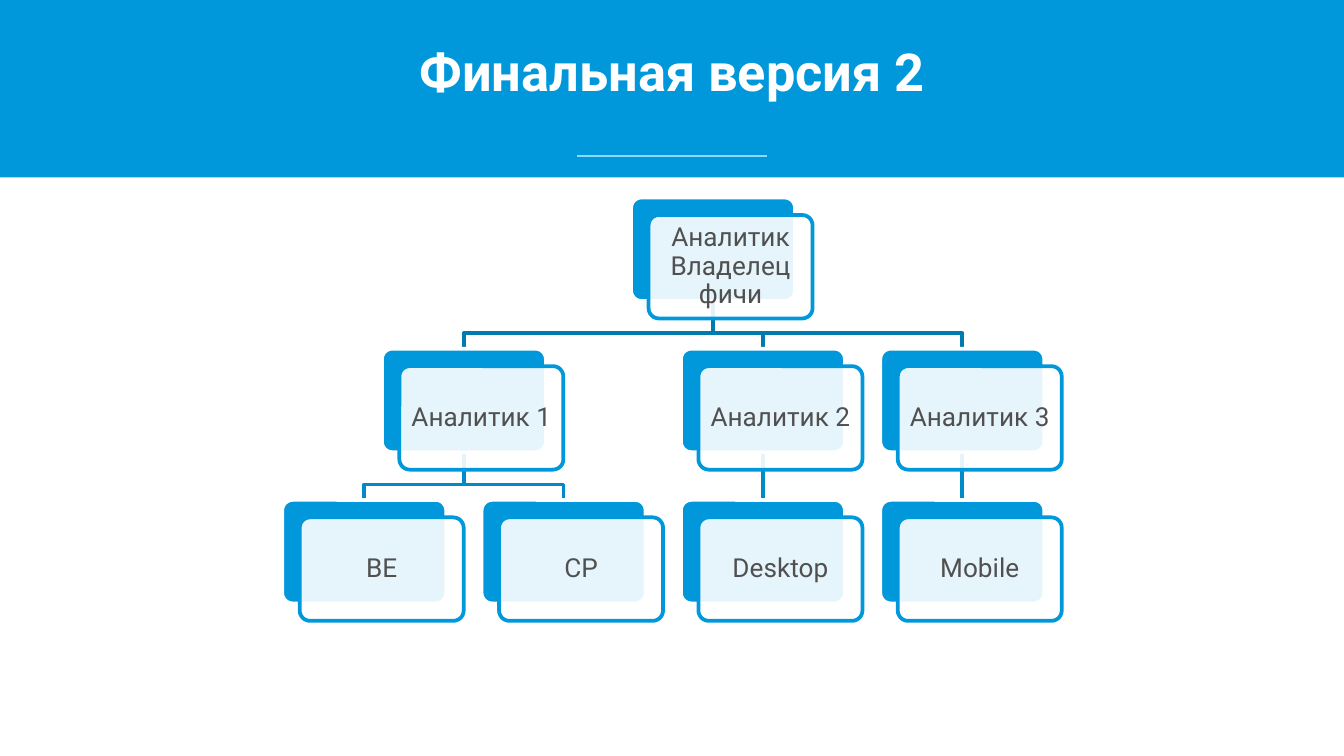
from dataclasses import dataclass

import pptx
import pptx.dml.color
import pptx.enum.shapes
import pptx.enum.text
import pptx.oxml
import pptx.oxml.ns
import pptx.util

Inches = pptx.util.Inches
Pt = pptx.util.Pt
ShapeKind = pptx.enum.shapes.MSO_SHAPE
Anchor = pptx.enum.text.MSO_ANCHOR
Align = pptx.enum.text.PP_ALIGN

COLOURS = {
    "blue": "0098DB",
    "pale": "8BDBFF",
    "upper_link": "007AAF",
    "lower_link": "008AC7",
    "white": "FFFFFF",
    "text": "505050",
}
FONT = "Roboto"
WIDTH = 10
HEIGHT = WIDTH * 9 / 16
GRID_LEFT, GRID_RIGHT = 2.1, 6.55
GRID_TOP, GRID_BOTTOM = 1.47, 3.72
COLUMN = (GRID_RIGHT - GRID_LEFT) / 3
ROW = (GRID_BOTTOM - GRID_TOP) / 2
CARD_WIDTH, CARD_HEIGHT = 1.22, 0.77
OFFSET = 0.13
BEND = 0.24


@dataclass(frozen=True)
class Role:
    label: str
    column: float
    row: int
    parent: str = ""

    @property
    def left(self) -> float:
        return GRID_LEFT + self.column * COLUMN

    @property
    def top(self) -> float:
        return GRID_TOP + self.row * ROW

    @property
    def centre(self) -> float:
        return self.left + CARD_WIDTH / 2

    @property
    def bottom(self) -> float:
        return self.top + CARD_HEIGHT


ROLES = [
    Role("Аналитик Владелец фичи", 1.75, 0),
    Role("Аналитик 1", 0.5, 1, "Аналитик Владелец фичи"),
    Role("BE", 0, 2, "Аналитик 1"),
    Role("CP", 1, 2, "Аналитик 1"),
    Role("Аналитик 2", 2, 1, "Аналитик Владелец фичи"),
    Role("Desktop", 2, 2, "Аналитик 2"),
    Role("Аналитик 3", 3, 1, "Аналитик Владелец фичи"),
    Role("Mobile", 3, 2, "Аналитик 3"),
]


def colour(name: str) -> pptx.dml.color.RGBColor:
    return pptx.dml.color.RGBColor.from_string(COLOURS[name])


def style_line(shape, name: str, weight: float) -> None:
    shape.line.color.rgb = colour(name)
    shape.line.width = Pt(weight)


def add_straight(page, start: tuple, end: tuple, name: str, weight: float):
    line = page.shapes.add_connector(
        pptx.enum.shapes.MSO_CONNECTOR.STRAIGHT, *map(Inches, start + end))
    style_line(line, name, weight)
    line._element.spPr.append(pptx.oxml.parse_xml(
        f"<a:effectLst {pptx.oxml.ns.nsdecls('a')}/>"))
    return line


def add_elbow(page, parent: Role, child: Role, name: str) -> None:
    bend = parent.bottom + BEND
    points = [(parent.centre, bend), (child.centre, bend), (child.centre, child.top)]
    builder = page.shapes.build_freeform(Inches(parent.centre), Inches(parent.bottom))
    builder.add_line_segments([(Inches(x), Inches(y)) for x, y in points], close=False)
    elbow = builder.convert_to_shape()
    elbow.shadow.inherit = False
    elbow.fill.background()
    style_line(elbow, name, 2)


def add_card(page, left: float, top: float, fill: str, line: str):
    card = page.shapes.add_shape(
        ShapeKind.ROUNDED_RECTANGLE,
        *map(Inches, (left, top, CARD_WIDTH, CARD_HEIGHT)))
    card.adjustments[0] = 0.1
    card.shadow.inherit = False
    card.fill.solid()
    card.fill.fore_color.rgb = colour(fill)
    style_line(card, line, 2)
    return card


def add_role(page, role: Role):
    back = add_card(page, role.left, role.top, "blue", "white")
    front = add_card(page, role.left + OFFSET, role.top + OFFSET, "white", "blue")
    tint = front._element.spPr.find(".//" + pptx.oxml.ns.qn("a:srgbClr"))
    tint.append(pptx.oxml.parse_xml(
        f'<a:alpha {pptx.oxml.ns.nsdecls("a")} val="90000"/>'))
    frame = front.text_frame
    frame.word_wrap = True
    frame.vertical_anchor = Anchor.MIDDLE
    frame.margin_left = frame.margin_right = Inches(0.06)
    frame.margin_top = frame.margin_bottom = Inches(0.06)
    frame.text = role.label
    para = frame.paragraphs[0]
    para.alignment = Align.CENTER
    para.line_spacing = 0.9
    para.font.name = FONT
    para.font.size = Pt(14)
    para.font.color.rgb = colour("text")
    return back


def add_header(page, text: str) -> None:
    band = page.shapes.add_shape(ShapeKind.RECTANGLE, 0, 0, Inches(WIDTH), Inches(1.32))
    band.shadow.inherit = False
    band.fill.solid()
    band.fill.fore_color.rgb = colour("blue")
    band.line.fill.background()
    add_straight(page, (4.29, 1.16), (5.71, 1.16), "pale", 0.75)

    title = page.shapes.title
    page.shapes._spTree.append(title._element)
    title.left, title.top, title.width, title.height = map(
        Inches, (0.59, 0.29, 8.82, 0.39))
    frame = title.text_frame
    frame.margin_left = frame.margin_right = frame.margin_top = frame.margin_bottom = 0
    frame.vertical_anchor = Anchor.TOP
    frame.auto_size = pptx.enum.text.MSO_AUTO_SIZE.NONE
    frame.text = text
    para = frame.paragraphs[0]
    para.alignment = Align.CENTER
    para.space_before = Pt(0)
    para.space_after = Pt(15)
    para.font.name = FONT
    para.font.size = Pt(28)
    para.font.bold = True
    para.font.color.rgb = colour("white")


def add_chart_of_roles(page, roles: list[Role]) -> None:
    by_label = {role.label: role for role in roles}
    straight_links = []
    for child in sorted(roles, key=lambda role: -role.row):
        if not child.parent:
            continue
        parent = by_label[child.parent]
        name = "upper_link" if parent.row == 0 else "lower_link"
        if parent.column == child.column:
            link = add_straight(page, (parent.centre, parent.bottom),
                                (child.centre, child.top), name, 2)
            straight_links.append((link, child))
        else:
            add_elbow(page, parent, child, name)

    cards = {role.label: add_role(page, role) for role in roles}
    for link, child in straight_links:
        link.begin_connect(cards[child.parent], 2)
        link.end_connect(cards[child.label], 0)


def main() -> None:
    deck = pptx.Presentation()
    deck.slide_width, deck.slide_height = Inches(WIDTH), Inches(HEIGHT)
    page = deck.slides.add_slide(deck.slide_layouts[5])
    add_header(page, "Финальная версия 2")
    add_chart_of_roles(page, ROLES)
    deck.save("out.pptx")


if __name__ == "__main__":
    main()
